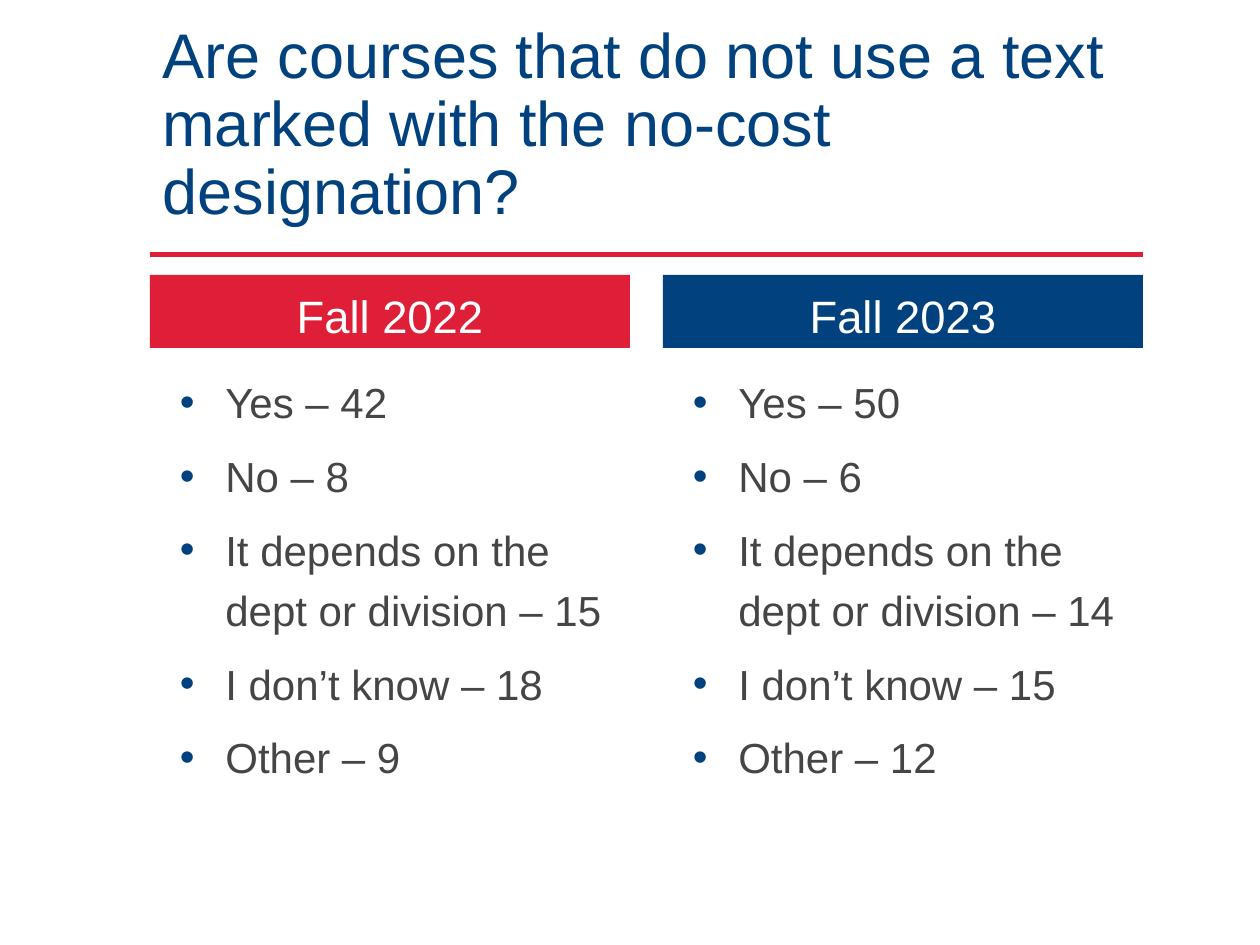
from lxml import etree
from pptx import Presentation
from pptx.dml.color import RGBColor
from pptx.enum.shapes import MSO_CONNECTOR, MSO_SHAPE
from pptx.enum.text import MSO_ANCHOR, MSO_AUTO_SIZE, PP_ALIGN
from pptx.oxml.ns import qn
from pptx.util import Pt

RED = RGBColor(0xDE, 0x1F, 0x37)
NAVY = RGBColor(0x00, 0x41, 0x7E)
GREY = RGBColor(0x45, 0x45, 0x45)
WHITE = RGBColor(0xFF, 0xFF, 0xFF)
LEFT, CENTER = PP_ALIGN.LEFT, PP_ALIGN.CENTER
TOP, BOTTOM = MSO_ANCHOR.TOP, MSO_ANCHOR.BOTTOM
RECT, LINE = MSO_SHAPE.RECTANGLE, MSO_CONNECTOR.STRAIGHT
FIXED = MSO_AUTO_SIZE.NONE

EDGE, WIDTH, GAP = 85.7, 567.4, 18.8
COL = (WIDTH - GAP) / 2
LABELS = ["Yes", "No", "It depends on the dept or division", "I don’t know", "Other"]
TERMS = [
    ("Fall 2022", RED, [42, 8, 15, 18, 9]),
    ("Fall 2023", NAVY, [50, 6, 14, 15, 12]),
]


class Deck:
    """Holds the text style and the current slide."""

    def __init__(self, font):
        self.font = font
        self.prs = Presentation()
        self.prs.slide_width, self.prs.slide_height = Pt(720), Pt(540)
        self.slide = self.prs.slides.add_slide(self.prs.slide_layouts[5])

    def frame(self, shape, anchor):
        frame = shape.text_frame
        frame.word_wrap = True
        frame.auto_size = FIXED
        frame.vertical_anchor = anchor
        return frame

    def add_text(self, para, text, size, color, align=LEFT, lead=1.0, before=0):
        para.alignment = align
        para.line_spacing = lead
        para.space_before = Pt(before)
        run = para.add_run()
        run.text = text
        run.font.name = self.font
        run.font.size = Pt(size)
        run.font.color.rgb = color

    def title(self, text, x, y, w, h):
        shape = self.slide.shapes.title
        shape.left, shape.top, shape.width, shape.height = Pt(x), Pt(y), Pt(w), Pt(h)
        para = self.frame(shape, BOTTOM).paragraphs[0]
        self.add_text(para, text, 36, NAVY, lead=0.9)

    def rule(self, x, y, w):
        line = self.slide.shapes.add_connector(LINE, Pt(x), Pt(y), Pt(x + w), Pt(y))
        line.line.color.rgb = RED
        line.line.width = Pt(2.5)
        etree.SubElement(line._element.spPr, qn("a:effectLst"))

    def banner(self, text, fill, x, y, w, h):
        shape = self.slide.shapes.add_shape(RECT, Pt(x), Pt(y), Pt(w), Pt(h))
        shape.shadow.inherit = False
        shape.fill.solid()
        shape.fill.fore_color.rgb = fill
        shape.line.fill.background()
        para = self.frame(shape, BOTTOM).paragraphs[0]
        self.add_text(para, text, 25.9, WHITE, CENTER, 0.8, 7.5)

    def bullet(self, para, color):
        props = para._p.get_or_add_pPr()
        props.set("marL", str(Pt(36)))
        props.set("indent", str(Pt(-26)))
        tint = etree.SubElement(props, qn("a:buClr"))
        etree.SubElement(tint, qn("a:srgbClr"), val=str(color))
        etree.SubElement(props, qn("a:buFont"), typeface=self.font)
        etree.SubElement(props, qn("a:buChar"), char="•")

    def points(self, items, x, y, w, h):
        box = self.slide.shapes.add_textbox(Pt(x), Pt(y), Pt(w), Pt(h))
        frame = self.frame(box, TOP)
        for i, item in enumerate(items):
            para = frame.add_paragraph() if i else frame.paragraphs[0]
            self.add_text(para, item, 24, GREY, lead=1.2, before=7.5)
            self.bullet(para, NAVY)


def main():
    deck = Deck("Arial")
    deck.rule(EDGE, 145.4, WIDTH)
    deck.title("Are courses that do not use a text marked with the no-cost designation?",
               EDGE, 63.4, WIDTH, 70.6)
    for i, (term, color, counts) in enumerate(TERMS):
        x = EDGE + i * (COL + GAP)
        deck.banner(term, color, x, 157, COL, 41.8)
        items = [f"{label} – {count}" for label, count in zip(LABELS, counts)]
        deck.points(items, x, 206, COL, 270)
    deck.prs.save("out.pptx")


if __name__ == "__main__":
    main()
